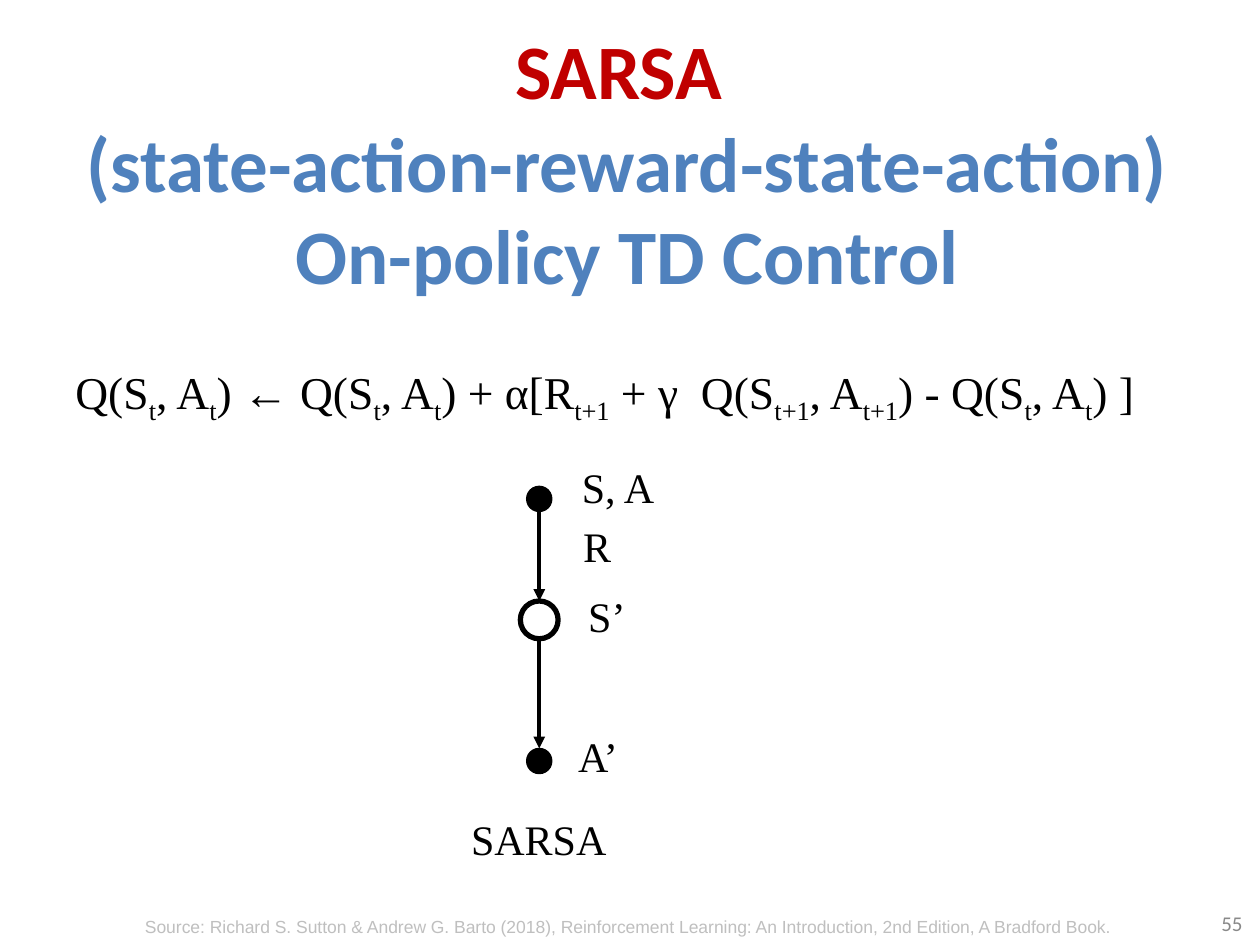
from lxml import etree
from pptx import Presentation
from pptx.dml.color import RGBColor
from pptx.enum.shapes import MSO_CONNECTOR, MSO_SHAPE
from pptx.enum.text import MSO_ANCHOR, PP_ALIGN
from pptx.oxml.ns import qn
from pptx.util import Inches, Pt

LEFT, CENTER, RIGHT = PP_ALIGN.LEFT, PP_ALIGN.CENTER, PP_ALIGN.RIGHT
TOP, MIDDLE = MSO_ANCHOR.TOP, MSO_ANCHOR.MIDDLE
OVAL, STRAIGHT = MSO_SHAPE.OVAL, MSO_CONNECTOR.STRAIGHT

SERIF = "Times New Roman"
BLACK, WHITE, RED, BLUE = "000000", "FFFFFF", "C00000", "4F81BD"
AXIS = 4.28  # centre line of the backup diagram

# Parts between bars alternate between normal text and subscript
RULE = ("Q(S|t|, A|t|) ← Q(S|t|, A|t|) + α[R|t+1| + γ  Q(S|t+1|, A|t+1|)"
        " - Q(S|t|, A|t|) ]")


def rgb(code):
    return RGBColor.from_string(code)


def add_text(slide, text, box, size=24, font=SERIF, color=BLACK, bold=False,
             align=LEFT, anchor=TOP, wrap=True):
    """Add a text box; text is a string or a list of lines of (text, color)."""
    frame = slide.shapes.add_textbox(*map(Inches, box)).text_frame
    frame.word_wrap = wrap
    frame.vertical_anchor = anchor
    para = frame.paragraphs[0]
    para.alignment = align
    lines = [(text, color)] if isinstance(text, str) else text
    for row, (line, shade) in enumerate(lines):
        if row:
            para.add_line_break()
        for i, part in enumerate(line.split("|")):
            run = para.add_run()
            run.text = part
            run.font.size = Pt(size)
            run.font.name = font
            run.font.bold = bold
            run.font.color.rgb = rgb(shade)
            if i % 2:
                run.font._element.set("baseline", "-25000")
    # Line breaks take the size of the text around them
    for mark in para._p.findall(qn("a:br")):
        etree.SubElement(mark, qn("a:rPr")).set("sz", str(size * 100))


def add_node(slide, top, size, fill, width):
    box = (AXIS - size / 2, top, size, size)
    node = slide.shapes.add_shape(OVAL, *map(Inches, box))
    node.shadow.inherit = False
    node.fill.solid()
    node.fill.fore_color.rgb = rgb(fill)
    node.line.color.rgb = rgb(BLACK)
    node.line.width = Pt(width)


def add_arrow(slide, start, end):
    ends = (AXIS, start, AXIS, end)
    arrow = slide.shapes.add_connector(STRAIGHT, *map(Inches, ends))
    arrow.line.color.rgb = rgb(BLACK)
    arrow.line.width = Pt(2.25)
    head = etree.SubElement(arrow.line._get_or_add_ln(), qn("a:tailEnd"))
    head.set("type", "triangle")
    etree.SubElement(arrow._element.spPr, qn("a:effectLst"))


def main():
    deck = Presentation()
    deck.slide_width, deck.slide_height = Inches(10), Inches(7.5)
    slide = deck.slides.add_slide(deck.slide_layouts[6])

    # Title
    title = [("SARSA ", RED), ("(state-action-reward-state-action)", BLUE),
             ("On-policy TD Control", BLUE)]
    add_text(slide, title, (0.48, 0.13, 9, 2.3), size=44, font="Calibri",
             bold=True, align=CENTER, anchor=MIDDLE)

    # Slide number and source
    add_text(slide, "55", (7.63, 7.13, 2.33, 0.4), size=12, font="Calibri",
             color="898989", align=RIGHT, anchor=MIDDLE)
    add_text(slide, "Source: Richard S. Sutton & Andrew G. Barto (2018), "
             "Reinforcement Learning: An Introduction, 2nd Edition, "
             "A Bradford Book.", (0.48, 7.22, 9, 0.27), size=10, font="Arial",
             color="BFBFBF", align=CENTER)

    # Update rule
    add_text(slide, RULE, (0.5, 2.84, 9.18, 0.81), size=26)

    # Backup diagram: action, state, action
    add_node(slide, 3.86, 0.2, BLACK, 0.75)
    add_node(slide, 4.77, 0.3, WHITE, 3)
    add_node(slide, 5.94, 0.2, BLACK, 0.75)
    add_arrow(slide, 4.06, 4.77)
    add_arrow(slide, 5.07, 5.94)

    # Diagram labels
    labels = [("S, A", 4.52, 3.61, 0.78), ("R", 4.53, 4.08, 0.43),
              ("S’", 4.57, 4.64, 0.5), ("A’", 4.49, 5.75, 0.52),
              ("SARSA", 3.64, 6.41, 1.29)]
    for text, left, top, width in labels:
        add_text(slide, text, (left, top, width, 0.5), wrap=False)

    deck.save("out.pptx")


if __name__ == "__main__":
    main()
